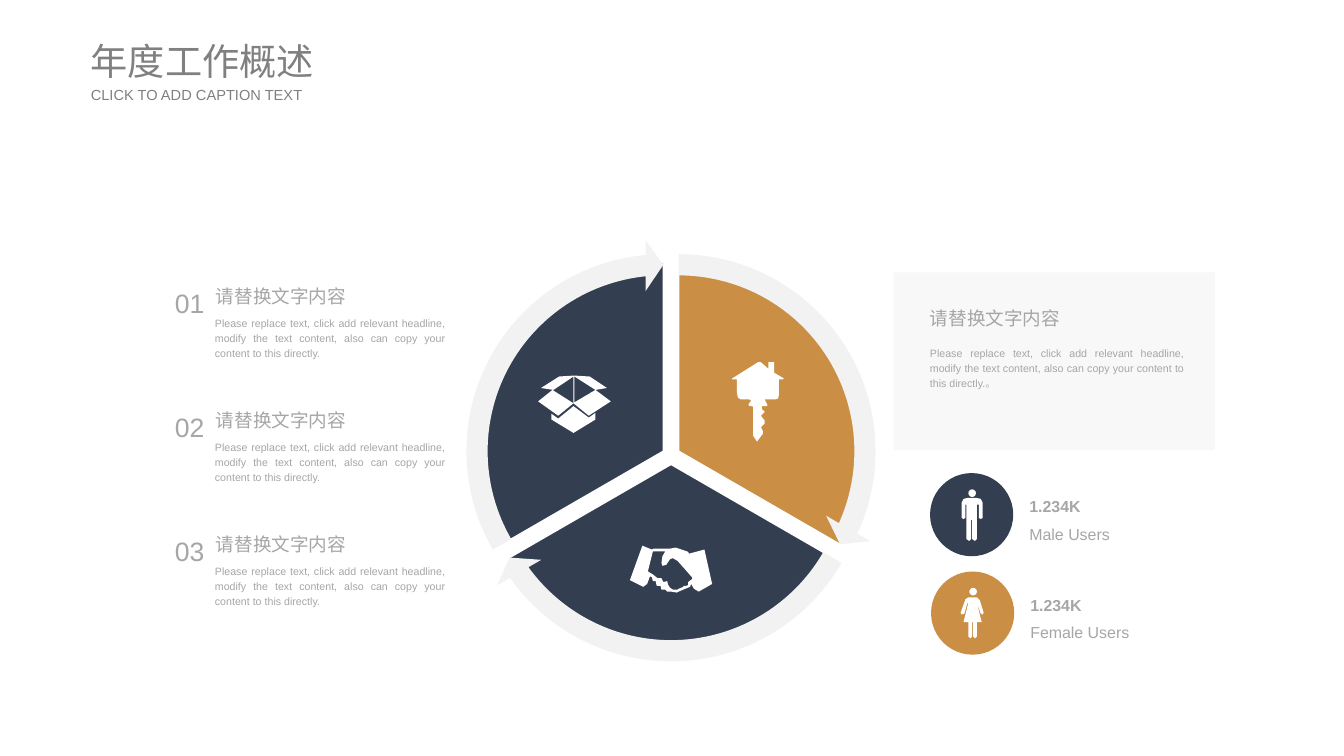
from math import cos, radians, sin

from lxml import etree
from pptx import Presentation
from pptx.dml.color import RGBColor
from pptx.enum.shapes import MSO_SHAPE
from pptx.enum.text import MSO_ANCHOR, MSO_AUTO_SIZE, PP_ALIGN
from pptx.oxml.ns import qn
from pptx.util import Emu, Inches, Pt

RECTANGLE, OVAL, CYCLE_ARROW = MSO_SHAPE.RECTANGLE, MSO_SHAPE.OVAL, MSO_SHAPE.CIRCULAR_ARROW
LEFT, JUSTIFY = PP_ALIGN.LEFT, PP_ALIGN.JUSTIFY
MIDDLE = MSO_ANCHOR.MIDDLE
FIT, FIXED = MSO_AUTO_SIZE.SHAPE_TO_FIT_TEXT, MSO_AUTO_SIZE.NONE

COLORS = {"navy": "333F50", "gold": "CA8F45", "pale": "F2F2F2", "white": "FFFFFF",
          "body": "A6A6A6", "title": "808080"}
FONT = "Arial"
WIDTH, HEIGHT = 14.06, 7.91

TITLE = "年度工作概述"
CAPTION = "CLICK TO ADD CAPTION TEXT"
HEADLINE = "请替换文字内容"
DETAIL = ("Please replace text, click add relevant headline, modify the text content, "
          "also can copy your content to this directly.")
POINTS = ["01", "02", "03"]
SECTORS = [("gold", 7.10, 4.72), ("navy", 7.02, 4.86), ("navy", 6.94, 4.72)]

HANDSHAKE = [
    [(78, 4), (63, 8), (63, 9), (60, 6), (48, 2), (42, 3), (25, 3), (23, 4), (13, 0), (0, 36),
     (14, 43), (18, 40), (21, 32), (23, 33), (24, 37), (27, 37), (28, 42), (32, 42), (33, 46),
     (37, 46), (39, 48), (43, 48), (49, 49), (51, 48), (58, 45), (63, 43), (64, 40), (67, 45),
     (72, 48), (86, 40)],
    [(62, 37), (61, 38), (61, 41), (59, 42), (56, 42), (56, 43), (51, 45), (50, 46), (45, 46),
     (42, 44), (40, 41), (39, 37), (35, 38), (33, 34), (29, 34), (24, 30), (19, 27), (19, 26),
     (24, 6), (37, 6), (34, 11), (33, 18), (34, 21), (38, 20), (42, 14), (45, 13), (50, 16),
     (65, 33), (65, 35)],
]
OPEN_BOX = [
    [(37, 29), (53, 42), (76, 27), (60, 15), (38, 28), (38, 1), (60, 15), (72, 13), (54, 1),
     (38, 0), (37, 0), (22, 1), (3, 13), (16, 15), (37, 1)],
    [(0, 27), (21, 42), (37, 29), (15, 15)],
    [(37, 32), (21, 45), (14, 40), (14, 46), (37, 60), (60, 46), (60, 39), (53, 44)],
]
HOUSE_KEY = [
    [(6, 33), (6, 19), (1, 19), (1, 18), (28, 1), (31, 1), (39, 8), (39, 1), (45, 1), (45, 12),
     (50, 15), (55, 18), (54, 19), (50, 19), (50, 35), (49, 39), (46, 40), (35, 40), (38, 46),
     (37, 47), (32, 47), (32, 50), (35, 53), (31, 57), (35, 62), (35, 65), (31, 69), (33, 73),
     (33, 76), (27, 84), (23, 78), (23, 48), (22, 47), (19, 47), (18, 45), (21, 41), (19, 40),
     (10, 40), (7, 38)],
]
MAN = [
    [(16, 0), (6, 0), (2, 1), (0, 5), (0, 21), (2, 22), (4, 21), (4, 7), (5, 7), (5, 43),
     (8, 45), (10, 43), (10, 23), (11, 23), (11, 43), (14, 45), (16, 43), (16, 7), (18, 7),
     (18, 21), (20, 22), (22, 21), (22, 5), (20, 1)],
]
WOMAN = [
    [(24, 16), (20, 3), (17, 0), (8, 0), (5, 2), (0, 16), (1, 18), (4, 17), (7, 6), (8, 6),
     (3, 26), (8, 26), (8, 41), (10, 43), (12, 41), (12, 26), (13, 26), (13, 41), (15, 43),
     (17, 41), (17, 26), (22, 26), (17, 6), (21, 17), (23, 18)],
]
SECTOR_ICONS = [(HANDSHAKE, 6.59, 5.71), (OPEN_BOX, 5.63, 3.93), (HOUSE_KEY, 7.65, 3.78)]
USERS = [("1.234K", "Male Users", 1.05, "navy", MAN, 0.33, 0.26),
         ("1.234K", "Female Users", 1.25, "gold", WOMAN, 0.31, 0.27)]

deck = Presentation()
deck.slide_width, deck.slide_height = Inches(WIDTH), Inches(HEIGHT)
slide = deck.slides.add_slide(deck.slide_layouts[5])
shapes = slide.shapes


def rgb(name):
    return RGBColor.from_string(COLORS[name])


def paint(shape, color):
    shape.shadow.inherit = False
    shape.fill.solid()
    shape.fill.fore_color.rgb = rgb(color)
    shape.line.fill.background()
    return shape


def preset(kind, color, *box):
    return paint(shapes.add_shape(kind, *map(Inches, box)), color)


def outline(loops, color, x, y, unit):
    builder = shapes.build_freeform(*loops[0][0], scale=unit)
    builder.add_line_segments(loops[0][1:])
    for loop in loops[1:]:
        builder.move_to(*loop[0])
        builder.add_line_segments(loop[1:])
    return paint(builder.convert_to_shape(Inches(x), Inches(y)), color)


def icon(loops, x, y):
    outline(loops, "white", x, y, Inches(0.01))


def write(frame, text, size, color="body", align=LEFT, bold=False):
    frame.text = text
    paragraph = frame.paragraphs[0]
    paragraph.alignment = align
    font = paragraph.font
    font.name, font.size, font.bold = FONT, Pt(size), bold
    font.color.rgb = rgb(color)
    return paragraph


def label(text, size, *box, wrap=False, align=LEFT, bold=False):
    frame = shapes.add_textbox(*map(Inches, box)).text_frame
    frame.word_wrap, frame.auto_size = wrap, FIT
    write(frame, text, size, align=align, bold=bold).line_spacing = 1.2


def heading(shape, text, size, top, height):
    shape.left, shape.top, shape.width, shape.height = map(Inches, (0.95, top, 2.53, height))
    frame = shape.text_frame
    frame.margin_left = frame.margin_top = frame.margin_right = frame.margin_bottom = 0
    frame.word_wrap, frame.auto_size, frame.vertical_anchor = True, FIXED, MIDDLE
    write(frame, text, size, "title")


def add_points():
    for row, number in enumerate(POINTS):
        top = 2.89 + 1.295 * row
        label(number, 20, 1.73, top, 0.51, 0.47, align=JUSTIFY)
        label(HEADLINE, 14, 2.16, top, 1.63, 0.36)
        label(DETAIL, 8, 2.15, top + 0.35, 2.61, 0.57, wrap=True, align=JUSTIFY)


def add_cycle():
    radius, arrow, sweep = Inches(1.97), 4.43, 120
    for turn, (color, x, y) in enumerate(SECTORS):
        start = sweep * turn - 90
        arc = [(radius * cos(radians(start + step)), radius * sin(radians(start + step)))
               for step in range(0, sweep + 1, 2)]
        sector = outline([[(0, 0)] + arc], color, x, y, Emu(1))
        sector.line.color.rgb = rgb("white")
        sector.line.width = Pt(1)
    for turn, (_, x, y) in enumerate(SECTORS):
        ring = preset(CYCLE_ARROW, "pale", x - arrow / 2, y - arrow / 2, arrow, arrow)
        angles = [5.46, 24.54 + sweep * turn, (270 + sweep * turn) % 360]
        settings = [0.05] + [angle * 0.6 for angle in angles] + [0.06]
        for index, setting in enumerate(settings):
            ring.adjustments[index] = setting
    for loops, x, y in SECTOR_ICONS:
        icon(loops, x, y)


def add_panel():
    panel = preset(RECTANGLE, "pale", 9.35, 2.85, 3.36, 1.86)
    tint = panel.fill._xPr.find(qn("a:solidFill"))[0]
    etree.SubElement(tint, qn("a:alpha")).set("val", "50000")
    label(HEADLINE, 14, 9.63, 3.12, 1.63, 0.36)
    label(DETAIL + "。", 8, 9.63, 3.55, 2.86, 0.59, wrap=True, align=JUSTIFY)


def add_users():
    for row, (count, group, width, color, figure, dx, dy) in enumerate(USERS):
        x, y = 9.73 + 0.01 * row, 4.95 + 1.03 * row
        preset(OVAL, color, x, y, 0.87, 0.87)
        preset(OVAL, "white", x + 0.4, y + 0.17, 0.08, 0.08)
        icon(figure, x + dx, y + dy)
        label(count, 12, x + 0.94, y + 0.16, 0.74, 0.32, bold=True)
        label(group, 12, x + 0.94, y + 0.45, width, 0.32)


heading(shapes.title, TITLE, 28, 0.39, 0.49)
heading(shapes.add_textbox(0, 0, 0, 0), CAPTION, 11, 0.9, 0.19)
add_points()
add_cycle()
add_panel()
add_users()
deck.save("out.pptx")
